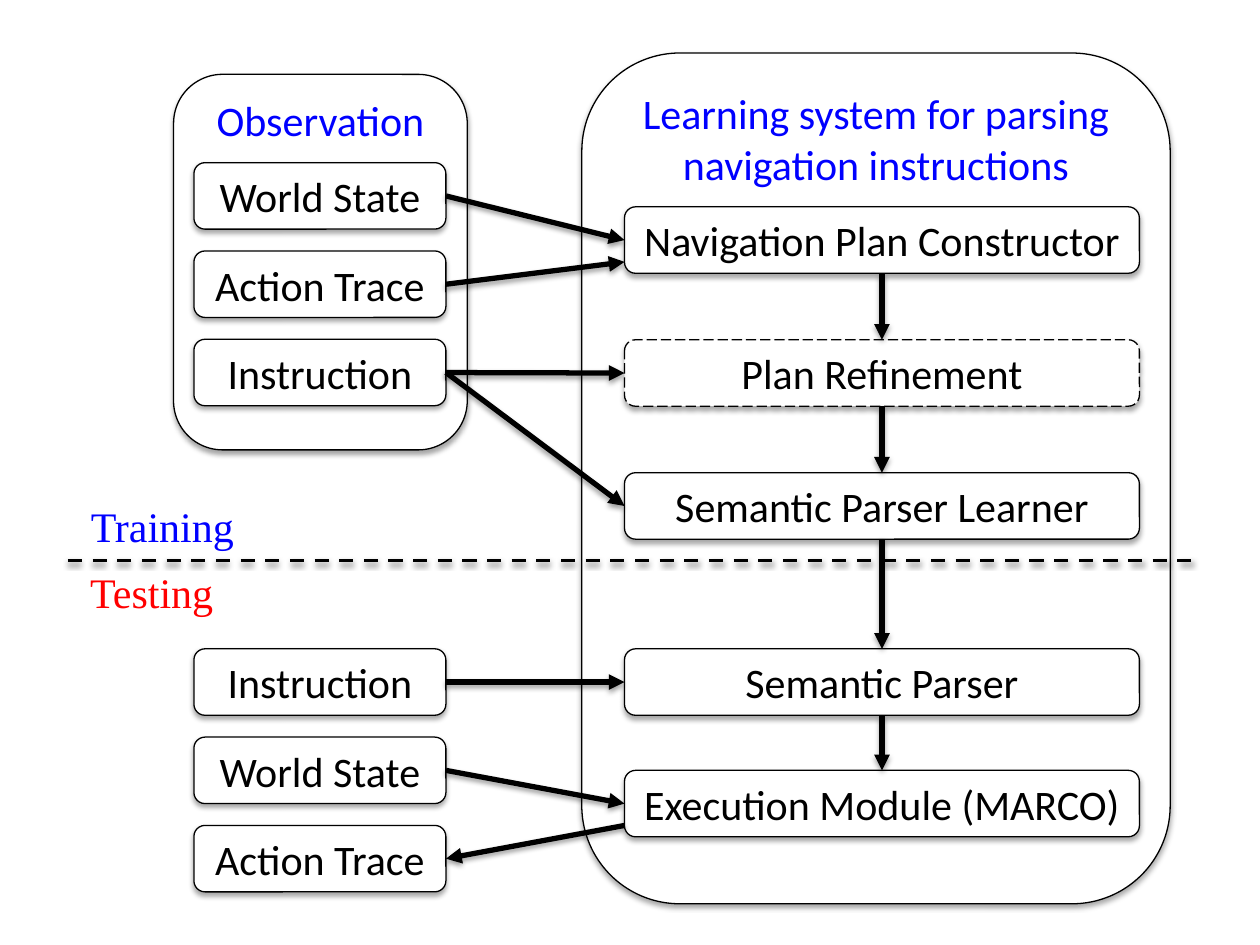
import pptx
import pptx.util
import pptx.dml.color
import pptx.enum.dml
import pptx.enum.shapes
import pptx.enum.text
import pptx.oxml
import pptx.oxml.ns

Cm = pptx.util.Cm
Pt = pptx.util.Pt
DASH = pptx.enum.dml.MSO_LINE
BLACK = pptx.dml.color.RGBColor(0, 0, 0)
WHITE = pptx.dml.color.RGBColor(255, 255, 255)
BLUE = pptx.dml.color.RGBColor(0, 0, 255)
RED = pptx.dml.color.RGBColor(255, 0, 0)
TOP, LEFT, BOTTOM, RIGHT = range(4)
BOX_H = 1.34
ROW_PITCH = 1.78


def add_shadow(sp, distance, opacity):
    """Give a shape or connector a soft shadow straight below it."""
    sp._element.spPr.append(pptx.oxml.parse_xml(
        f'<a:effectLst {pptx.oxml.ns.nsdecls("a")}>'
        f'<a:outerShdw blurRad="{Pt(3.1)}" dist="{Pt(distance)}" dir="5400000" rotWithShape="0">'
        f'<a:srgbClr val="{BLACK}"><a:alpha val="{opacity * 1000}"/></a:srgbClr>'
        '</a:outerShdw></a:effectLst>'))


def set_text(sp, text, color, font="Calibri"):
    """Write centred 24 pt text, one paragraph for each line."""
    tf = sp.text_frame
    tf.text = text
    for p in tf.paragraphs:
        p.alignment = pptx.enum.text.PP_ALIGN.CENTER
        for r in p.runs:
            r.font.size = Pt(24)
            r.font.name = font
            r.font.color.rgb = color


def add_box(s, x, y, w, h, text, color=BLACK, anchor=pptx.enum.text.MSO_ANCHOR.MIDDLE):
    """Add a white rounded box with a thin black outline."""
    sp = s.shapes.add_shape(pptx.enum.shapes.MSO_SHAPE.ROUNDED_RECTANGLE,
                            Cm(x), Cm(y), Cm(w), Cm(h))
    sp.fill.solid()
    sp.fill.fore_color.rgb = WHITE
    sp.line.color.rgb = BLACK
    sp.line.width = Pt(0.75)
    add_shadow(sp, 1.8, 35)
    sp.text_frame.word_wrap = True
    sp.text_frame.vertical_anchor = anchor
    set_text(sp, text, color)
    return sp


def add_panel(s, x, y, w, h, title):
    """Add a large box with a blue title at its top."""
    return add_box(s, x, y, w, h, title, BLUE, pptx.enum.text.MSO_ANCHOR.TOP)


def add_line(s, x1, y1, x2, y2, width):
    """Add a straight black line between two points."""
    line = s.shapes.add_connector(pptx.enum.shapes.MSO_CONNECTOR.STRAIGHT, x1, y1, x2, y2)
    line.line.color.rgb = BLACK
    line.line.width = Pt(width)
    add_shadow(line, 1.6, 38)
    return line


def side_point(sp, side):
    """Return the middle of one side of a shape."""
    x = {LEFT: sp.left, RIGHT: sp.left + sp.width}.get(side, sp.left + sp.width // 2)
    y = {TOP: sp.top, BOTTOM: sp.top + sp.height}.get(side, sp.top + sp.height // 2)
    return x, y


def add_arrow(s, start, start_side, end, end_side, start_shift=0, end_shift=0):
    """Add an arrow between two boxes, glued where it meets the middle of a side."""
    x1, y1 = side_point(start, start_side)
    x2, y2 = side_point(end, end_side)
    arrow = add_line(s, x1, y1 + Cm(start_shift), x2, y2 + Cm(end_shift), 3)
    if not start_shift:
        arrow.begin_connect(start, start_side)
    if not end_shift:
        arrow.end_connect(end, end_side)
    arrow.line._get_or_add_ln().append(pptx.oxml.parse_xml(
        f'<a:tailEnd {pptx.oxml.ns.nsdecls("a")} type="triangle"/>'))


def add_data_boxes(s, x, y, w, labels):
    """Stack evenly spaced data boxes downwards from a corner."""
    return [add_box(s, x, y + i * ROW_PITCH, w, BOX_H, label)
            for i, label in enumerate(labels)]


def add_observation(s, x, y, w, h):
    """Add the observation panel and return its data boxes."""
    add_panel(s, x, y, w, h, "Observation")
    return add_data_boxes(s, x + 0.41, y + 1.78, w - 0.84,
                          ["World State", "Action Trace", "Instruction"])


def add_learning_system(s, x, y, w, h):
    """Add the learning system panel and return its modules from top to bottom."""
    add_panel(s, x, y, w, h, "Learning system for parsing\nnavigation instructions")
    modules = [
        ("Navigation Plan Constructor", 3.1),
        ("Plan Refinement", 5.78),
        ("Semantic Parser Learner", 8.46),
        ("Semantic Parser", 12.01),
        ("Execution Module (MARCO)", 14.46),
    ]
    boxes = [add_box(s, x + 0.86, y + dy, w - 1.48, BOX_H, label) for label, dy in modules]
    boxes[1].line.dash_style = DASH.LONG_DASH
    return boxes


def add_phase_divider(s, x, y, w):
    """Add the dashed divider with a phase label above and below it."""
    line = add_line(s, Cm(x), Cm(y), Cm(x + w), Cm(y), 2)
    line.line.dash_style = DASH.DASH
    for text, dy, width, color in [("Training", -1.34, 3.81, BLUE), ("Testing", 0, 3.38, RED)]:
        sp = s.shapes.add_textbox(Cm(x), Cm(y + dy), Cm(width), Cm(1.28))
        sp.text_frame.word_wrap = True
        set_text(sp, text, color, "Times New Roman")


def add_flow(s, training, testing, modules):
    """Connect the data boxes and modules with arrows."""
    state, trace, instruction = training
    test_instruction, test_state, test_trace = testing
    constructor, refinement, learner, parser, execution = modules
    for upper, lower in zip(modules, modules[1:]):
        add_arrow(s, upper, BOTTOM, lower, TOP)
    for data, module, shift in [
        (state, constructor, 0),
        (trace, constructor, 0.44),
        (instruction, refinement, 0),
        (instruction, learner, 0),
        (test_instruction, parser, 0),
        (test_state, execution, 0),
    ]:
        add_arrow(s, data, RIGHT, module, LEFT, end_shift=shift)
    add_arrow(s, execution, LEFT, test_trace, RIGHT, start_shift=0.44)


def main():
    """Build the slide and save it."""
    prs = pptx.Presentation()
    prs.slide_width, prs.slide_height = Cm(25.4), Cm(19.05)
    s = prs.slides.add_slide(prs.slide_layouts[6])
    modules = add_learning_system(s, 11.73, 1.07, 11.86, 17.15)
    training = add_observation(s, 3.5, 1.5, 5.92, 7.57)
    testing = add_data_boxes(s, 3.91, 13.08, 5.08,
                             ["Instruction", "World State", "Action Trace"])
    add_phase_divider(s, 1.37, 11.3, 22.66)
    add_flow(s, training, testing, modules)
    prs.save("out.pptx")


if __name__ == "__main__":
    main()
